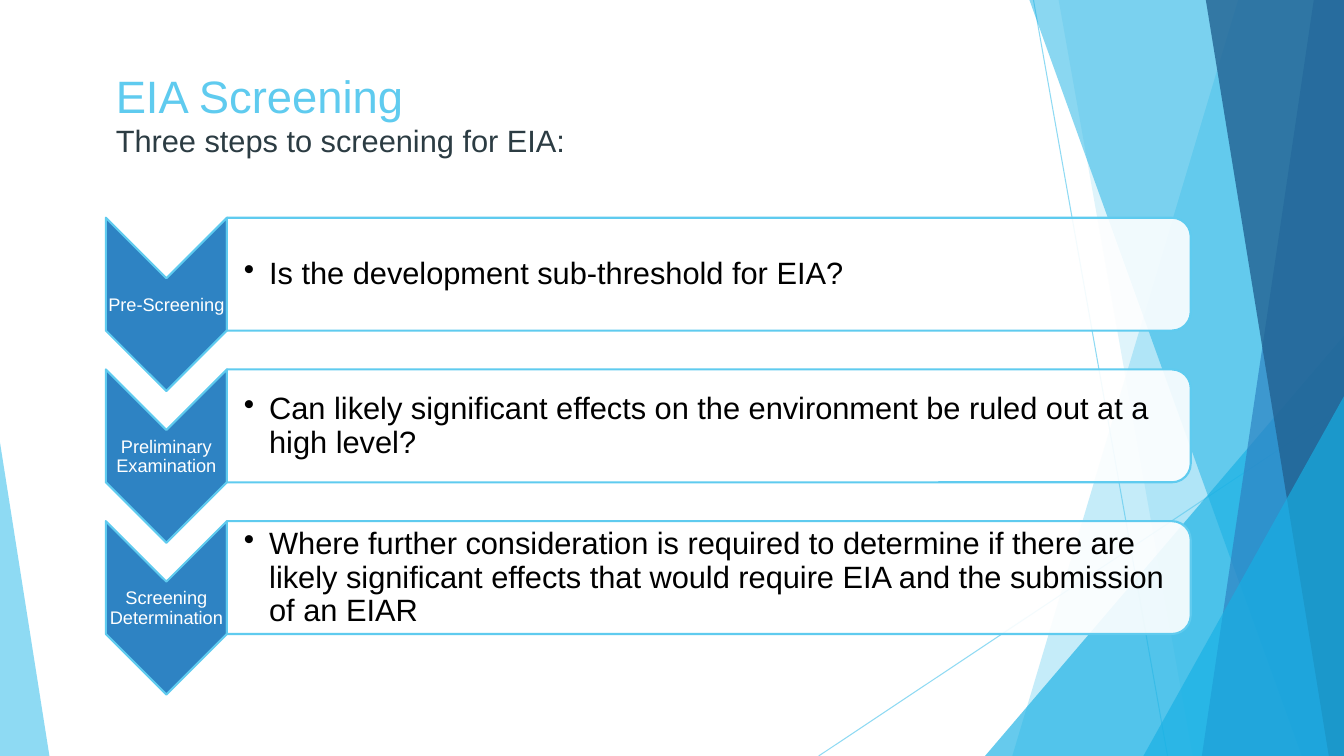
from dataclasses import dataclass

import pptx
import pptx.dml.color
import pptx.enum.shapes
import pptx.enum.text
import pptx.oxml
import pptx.oxml.ns
import pptx.util
from lxml import etree

Inches = pptx.util.Inches
Pt = pptx.util.Pt
RGBColor = pptx.dml.color.RGBColor
Shape = pptx.enum.shapes.MSO_SHAPE
Align = pptx.enum.text.PP_ALIGN
Anchor = pptx.enum.text.MSO_ANCHOR
qn = pptx.oxml.ns.qn

WIDE, HIGH = 13.33, 7.5
SKY = RGBColor(0x5F, 0xCB, 0xEF)
CYAN = RGBColor(0x17, 0xB0, 0xE4)
BLUE = RGBColor(0x2E, 0x83, 0xC3)
NAVY = RGBColor(0x22, 0x62, 0x92)
SLATE = RGBColor(0x2C, 0x3C, 0x43)
WHITE = RGBColor(0xFF, 0xFF, 0xFF)
BLACK = RGBColor(0, 0, 0)


@dataclass
class Ray:
    start: tuple[float, float]
    end: tuple[float, float]


@dataclass
class Band:
    """A panel that reaches the right edge, with a slanted left side."""
    top: float
    base: float
    color: RGBColor
    alpha: int


@dataclass
class Wedge:
    box: tuple[float, float, float, float]
    peak: float
    color: RGBColor
    alpha: int


@dataclass
class Step:
    label: str
    text: str


RAYS = [Ray((10.25, 0), (11.58, HIGH)), Ray((WIDE, 4.03), (8.12, HIGH))]
PANELS = [
    Band(12.28, 10.04, SKY, 36),
    Band(10.5, 11.83, SKY, 20),
    Wedge((9.77, 3.33, 3.56, 4.17), 1, CYAN, 66),
    Band(10.21, 12.91, CYAN, 50),
    Band(13.03, 11.92, BLUE, 70),
    Band(11.96, 13.18, NAVY, 80),
    Wedge((11.34, 3.93, 1.99, 3.57), 1, CYAN, 66),
    Wedge((0, 4.39, 0.49, 3.11), 0, SKY, 70),
]
STEPS = [
    Step("Pre-Screening", "Is the development sub-threshold for EIA?"),
    Step("Preliminary Examination",
         "Can likely significant effects on the environment be ruled out at a high level?"),
    Step("Screening Determination",
         "Where further consideration is required to determine if there are likely "
         "significant effects that would require EIA and the submission of an EIAR"),
]
PITCH = 3.01 / 2


def fade(fill, alpha: int) -> None:
    """Set the opacity of a solid fill or line, in percent."""
    color = fill._xPr.find(qn("a:solidFill"))[0]
    etree.SubElement(color, qn("a:alpha")).set("val", str(alpha * 1000))


def paint(shape, color: RGBColor, alpha: int = 100, edge: RGBColor | None = None) -> None:
    shape.shadow.inherit = False
    shape.fill.solid()
    shape.fill.fore_color.rgb = color
    if alpha < 100:
        fade(shape.fill, alpha)
    if edge is None:
        shape.line.fill.background()
    else:
        shape.line.color.rgb = edge
        shape.line.width = Pt(1.5)


def add_ray(slide, ray: Ray) -> None:
    ends = [Inches(v) for v in ray.start + ray.end]
    line = slide.shapes.add_connector(pptx.enum.shapes.MSO_CONNECTOR.STRAIGHT, *ends)
    line.line.color.rgb = SKY
    line.line.width = Pt(0.75)
    fade(line.line.fill, 70)
    etree.SubElement(line._element.spPr, qn("a:effectLst"))


def add_panel(slide, panel: Band | Wedge) -> None:
    if isinstance(panel, Band):
        pen = slide.shapes.build_freeform(Inches(panel.top), 0)
        rest = [(WIDE, 0), (WIDE, HIGH), (panel.base, HIGH)]
        pen.add_line_segments([(Inches(x), Inches(y)) for x, y in rest], close=True)
        shape = pen.convert_to_shape()
    else:
        shape = slide.shapes.add_shape(
            Shape.ISOSCELES_TRIANGLE, *[Inches(v) for v in panel.box])
        shape.adjustments[0] = panel.peak
    paint(shape, panel.color, panel.alpha)


def add_text(slide, text: str, box: tuple[float, ...], *, size: float, color: RGBColor,
             inset: tuple[float, ...], anchor=Anchor.MIDDLE, align=Align.LEFT,
             space: float = 1.0, bullet: bool = False) -> None:
    frame = slide.shapes.add_textbox(*[Inches(v) for v in box]).text_frame
    frame.word_wrap = True
    frame.vertical_anchor = anchor
    (frame.margin_left, frame.margin_top,
     frame.margin_right, frame.margin_bottom) = [Inches(v) for v in inset]
    line = frame.paragraphs[0]
    line.alignment = align
    line.line_spacing = space
    run = line.add_run()
    run.text = text
    run.font.name = "Arial"
    run.font.size = Pt(size)
    run.font.color.rgb = color
    if bullet:
        props = line._p.get_or_add_pPr()
        props.set("marL", str(Inches(0.25)))
        props.set("indent", str(-Inches(0.25)))
        etree.SubElement(props, qn("a:buChar")).set("char", "•")


def add_turned(slide, kind, box: tuple[float, ...], color: RGBColor, alpha: int) -> None:
    """Draw an outlined shape turned a quarter to the right."""
    shape = slide.shapes.add_shape(kind, *[Inches(v) for v in box])
    shape.rotation = 90
    paint(shape, color, alpha, SKY)


def add_step(slide, step: Step, drop: float) -> None:
    add_turned(slide, Shape.CHEVRON, (0.79, 2.42 + drop, 1.72, 1.2), BLUE, 100)
    add_text(slide, step.label, (1.05, 2.77 + drop, 1.2, 0.52), size=13, color=WHITE,
             inset=(0.01,) * 4, align=Align.CENTER, space=0.9)
    add_turned(slide, Shape.ROUND_2_SAME_RECTANGLE, (6.47, -2.06 + drop, 1.12, 9.56),
               WHITE, 90)
    add_text(slide, step.text, (2.25, 2.22 + drop, 9.5, 1.01), size=22, color=BLACK,
             inset=(0.17, 0.02, 0.02, 0.02), space=0.9, bullet=True)


def main() -> None:
    deck = pptx.Presentation()
    deck.slide_width, deck.slide_height = Inches(WIDE), Inches(HIGH)
    slide = deck.slides.add_slide(deck.slide_layouts[6])
    for ray in RAYS:
        add_ray(slide, ray)
    for panel in PANELS:
        add_panel(slide, panel)
    add_text(slide, "EIA Screening", (1.05, 0.59, 9.07, 0.55), size=32.4, color=SKY,
             inset=(0.1, 0.09, 0.1, 0), anchor=Anchor.TOP)
    for index, step in enumerate(STEPS):
        add_step(slide, step, index * PITCH)
    add_text(slide, "Three steps to screening for EIA:", (1.05, 1.14, 9.07, 0.53), size=22,
             color=SLATE, inset=(0.1, 0.07, 0.1, 0.05), anchor=Anchor.TOP)
    deck.save("out.pptx")


if __name__ == "__main__":
    main()
